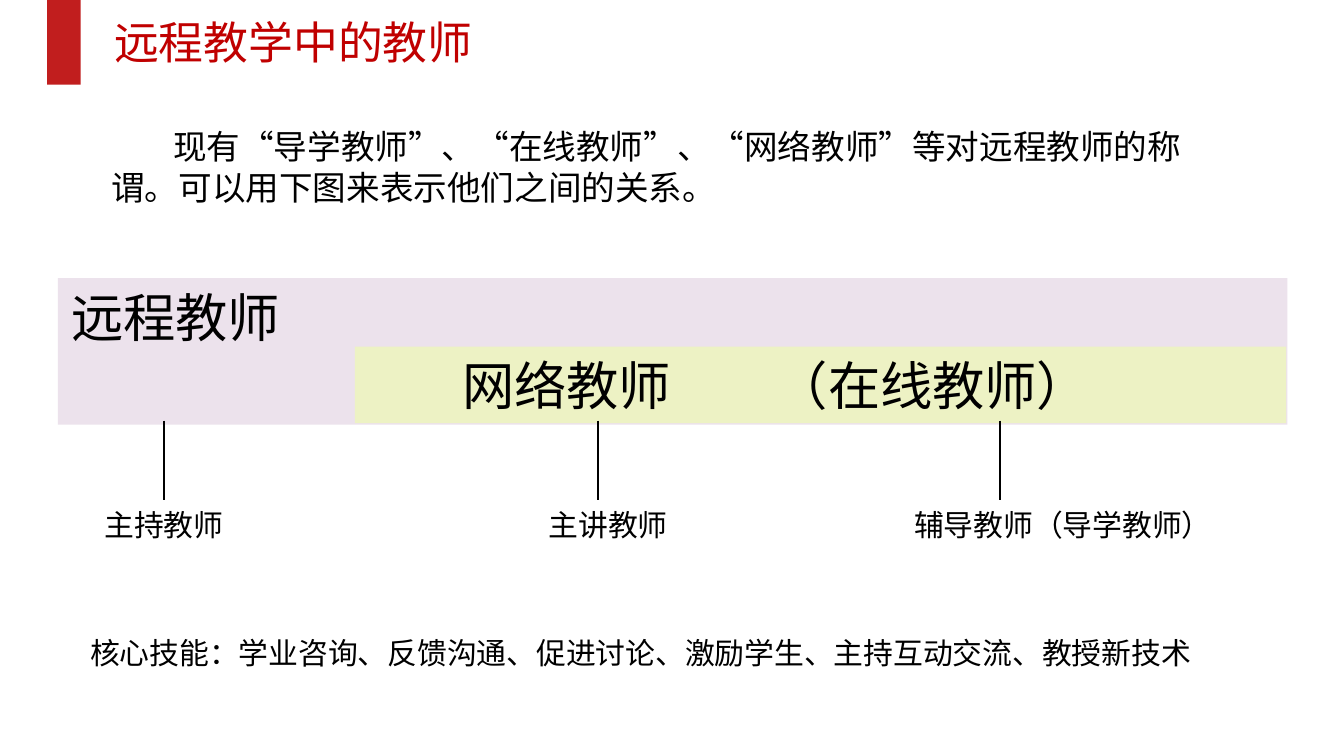
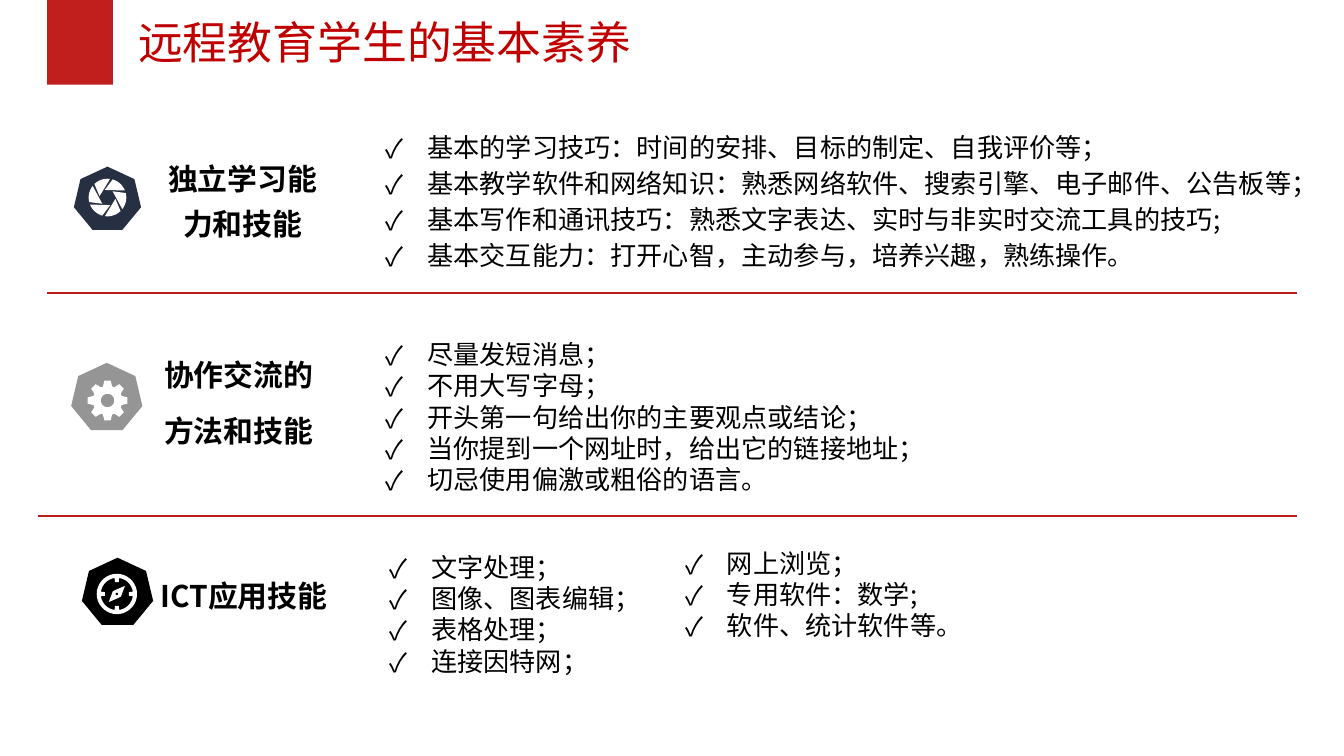
"""Build two slides on teachers and students in distance education."""
import dataclasses
import math

import lxml.etree
import pptx
import pptx.dml.color
import pptx.enum.shapes
import pptx.enum.text
import pptx.oxml.ns
import pptx.util

ALIGN = pptx.enum.text.PP_ALIGN
ANCHOR = pptx.enum.text.MSO_ANCHOR
SHAPE = pptx.enum.shapes.MSO_SHAPE
inch = pptx.util.Inches


@dataclasses.dataclass(frozen=True)
class Theme:
    """Colours and type sizes of the deck."""
    font: str = "Noto Sans CJK SC"
    title: str = "C00000"
    band: str = "C11E1E"
    rule: str = "BD1A1A"
    ink: str = "000000"
    paper: str = "FFFFFF"
    outer: str = "ECE2EC"
    inner: str = "EDF2C4"
    navy: str = "272F42"
    grey: str = "959595"
    title_size: int = 24
    field_size: int = 28
    body_size: int = 18
    label_size: int = 16
    list_size: int = 14


THEME = Theme()
SIZE = (10, 10 * 9 / 16)
BAND_LEFT, BAND_HEIGHT = 0.35, 0.63
STEM_TOP, STEM_BOTTOM = 3.13, 3.72
INSETS = (0.1, 0.05, 0.1, 0.05)
INTRO_INSETS = (0.1, 0.08, 0.1, 0.05)
LIST_INSETS = (0.39, 0, 0.24, 0)
INNER_GAP = 50

TEACHERS = {
    "title": ("远程教学中的教师", 0.75, 0.25),
    "intro": "现有“导学教师”、“在线教师”、“网络教师”等对远程教师的称谓。可以用下图来表示他们之间的关系。",
    "outer": "远程教师",
    "inner": ("网络教师", " ", "（在线教师）"),
    "roles": [
        ("主持教师", 0.28, 1.88, 1.22),
        ("主讲教师", 3.58, 1.89, 4.45),
        ("辅导教师（导学教师）", 6.02, 3.78, 7.44),
    ],
    "skills": "核心技能：学业咨询、反馈沟通、促进讨论、激励学生、主持互动交流、教授新技术",
}

STUDENTS = {
    "title": ("远程教育学生的基本素养", 0.93, 0.49),
    "headings": [
        (["独立学习能力和技能"], (1.13, 1.08, 1.35, 0.74), True),
        (["协作交流的", "方法和技能"], (0.86, 2.54, 1.83, 0.83), True),
        (["ICT应用技能"], (0.67, 4.25, 2.29, 0.37), False),
    ],
    "centred_lists": [
        (["基本的学习技巧：时间的安排、目标的制定、自我评价等；",
          "基本教学软件和网络知识：熟悉网络软件、搜索引擎、电子邮件、公告板等；",
          "基本写作和通讯技巧：熟悉文字表达、实时与非实时交流工具的技巧;",
          "基本交互能力：打开心智，主动参与，培养兴趣，熟练操作。"],
         (2.48, 1, 8.43, 0.96), 1.14),
        (["尽量发短消息；", "不用大写字母；", "开头第一句给出你的主要观点或结论；",
          "当你提到一个网址时，给出它的链接地址；", "切忌使用偏激或粗俗的语言。"],
         (2.48, 2.62, 5, 0.96), None),
    ],
    "ict_lists": [
        (["文字处理；", "图像、图表编辑；", "表格处理；", "连接因特网；"], (2.8, 4.05, 2.48, 1.04)),
        (["网上浏览；", "专用软件：数学;", "软件、统计软件等。"], (5, 4.02, 2.48, 0.81)),
    ],
    "rules": [(0.35, 2.18), (0.28, 3.84)],
}


def rgb(colour):
    """Turn a hex string into a colour."""
    return pptx.dml.color.RGBColor.from_string(colour)


def paint(shape, colour):
    """Give a shape a flat fill without outline or shadow."""
    shape.shadow.inherit = False
    shape.fill.solid()
    shape.fill.fore_color.rgb = rgb(colour)
    shape.line.fill.background()
    return shape


def add_block(slide, kind, box, colour):
    """Add a flat preset shape."""
    return paint(slide.shapes.add_shape(kind, *map(inch, box)), colour)


def write(shape, lines, size, colour=THEME.ink, align=ALIGN.LEFT, bold=False,
          anchor=ANCHOR.TOP, insets=INSETS, spacing=None, before=None):
    """Fill a shape with paragraphs of one style."""
    frame = shape.text_frame
    frame.word_wrap = True
    frame.vertical_anchor = anchor
    (frame.margin_left, frame.margin_top,
     frame.margin_right, frame.margin_bottom) = map(inch, insets)
    frame.text = "\n".join(lines)
    for paragraph in frame.paragraphs:
        paragraph.alignment = align
        paragraph.line_spacing = spacing
        paragraph.space_before = before
        font = paragraph.font
        font.name, font.size, font.bold = THEME.font, pptx.util.Pt(size), bold
        font.color.rgb = rgb(colour)
    return frame.paragraphs


def add_text(slide, box, lines, size, **style):
    """Add a text box and return it with its paragraphs."""
    label = slide.shapes.add_textbox(*map(inch, box))
    return label, write(label, lines, size, **style)


def indent(paragraph, margin, first, bullet=None):
    """Set the indents of a paragraph, and its bullet if it has one."""
    settings = paragraph._p.get_or_add_pPr()
    settings.set("marL", str(inch(margin)))
    settings.set("indent", str(inch(first)))
    if bullet:
        defaults = settings.find(pptx.oxml.ns.qn("a:defRPr"))
        for tag, name, value in (("a:buFont", "typeface", THEME.font),
                                 ("a:buChar", "char", bullet)):
            mark = lxml.etree.Element(pptx.oxml.ns.qn(tag))
            mark.set(name, value)
            defaults.addprevious(mark)


def add_checklist(slide, box, items, **style):
    """Add a list with tick bullets."""
    for paragraph in add_text(slide, box, items, THEME.list_size, **style)[1]:
        indent(paragraph, 0.31, -0.31, bullet="✓")


def add_line(slide, start, end, colour, width):
    """Add a straight line without shadow."""
    line = slide.shapes.add_connector(
        pptx.enum.shapes.MSO_CONNECTOR.STRAIGHT, *map(inch, start + end))
    line.line.color.rgb = rgb(colour)
    line.line.width = pptx.util.Pt(width)
    lxml.etree.SubElement(line._element.spPr, pptx.oxml.ns.qn("a:effectLst"))
    return line


def add_header(slide, text, left, band_width):
    """Add the title and its red band."""
    add_text(slide, (left, 0.06, 4.18, 0.5), [text], THEME.title_size,
             colour=THEME.title, align=ALIGN.JUSTIFY)
    add_block(slide, SHAPE.RECTANGLE, (BAND_LEFT, 0, band_width, BAND_HEIGHT), THEME.band)


def polar(radius, degrees):
    """Return the point at a radius and an angle."""
    angle = math.radians(degrees)
    return radius * math.cos(angle), radius * math.sin(angle)


def arc(radius, start, end, steps=8):
    """Return points along an arc."""
    return [polar(radius, start + (end - start) * i / steps) for i in range(steps + 1)]


def circle(radius):
    """Return the points of a circle."""
    return arc(radius, 0, 360, 36)


def aperture():
    """Return the six blades of a shutter."""
    return [arc(0.14, turn - 82, turn - 134) + [polar(0.06, turn - 170)]
            for turn in range(0, 360, 60)]


def gear():
    """Return a wheel of eight teeth with a hole."""
    teeth = [polar(radius, turn + offset) for turn in range(0, 360, 45)
             for radius, offset in ((0.11, -18), (0.15, -9), (0.15, 9), (0.11, 18))]
    return [teeth, circle(0.05)]


def compass():
    """Return a ring with four ticks, and a needle with a hole."""
    dial = [point for turn in range(0, 360, 90)
            for point in [polar(0.09, turn - 9), polar(0.09, turn + 9)]
            + arc(0.12, turn + 8, turn + 82)]
    half = [(0.06, -0.06), (0.03, 0.02), (0.01, 0.03)]
    needle = half + [(-x, -y) for x, y in half]
    return [circle(0.15), dial, needle, circle(0.01)]


ICONS = [
    ((0.55, 1.24, 0.5, 0.47), THEME.navy, (0.8, 1.47), aperture()),
    ((0.53, 2.7, 0.53, 0.5), THEME.grey, (0.8, 2.98), gear()),
    ((0.61, 4.15, 0.53, 0.5), THEME.ink, (0.87, 4.42), compass()),
]


def add_icon(slide, box, colour, centre, contours):
    """Add a heptagon with a white sign."""
    add_block(slide, SHAPE.HEPTAGON, box, colour)
    builder = None
    for contour in contours:
        first, *rest = [(inch(centre[0] + x), inch(centre[1] + y)) for x, y in contour]
        if builder is None:
            builder = slide.shapes.build_freeform(*first)
        else:
            builder.move_to(*first)
        builder.add_line_segments(rest, close=True)
    paint(builder.convert_to_shape(), THEME.paper)


def add_inner_field(slide):
    """Add the inner field, with a wide gap between its two names."""
    inner = add_block(slide, SHAPE.RECTANGLE, (2.64, 2.58, 6.93, 0.57), THEME.inner)
    name, *others = TEACHERS["inner"]
    paragraph = write(inner, [name], THEME.field_size)[0]
    indent(paragraph, 0, 0.7)
    for part in others:
        run = paragraph.add_run()
        run.text = part
        if part.isspace():
            run._r.get_or_add_rPr().set("spc", str(INNER_GAP * 100))


def build_teachers(slide):
    """Show how the names for teachers relate."""
    add_header(slide, *TEACHERS["title"])
    _, intro = add_text(slide, (0.35, 0.86, 8.58, 0.85), [TEACHERS["intro"]],
                        THEME.body_size, insets=INTRO_INSETS)
    indent(intro[0], 0.38, 0.46)
    outer = add_block(slide, SHAPE.RECTANGLE, (0.43, 2.07, 9.15, 1.09), THEME.outer)
    write(outer, [TEACHERS["outer"]], THEME.field_size)
    add_inner_field(slide)
    for role, left, width, stem in TEACHERS["roles"]:
        label, _ = add_text(slide, (left, STEM_BOTTOM, width, 0.37), [role],
                            THEME.label_size, align=ALIGN.CENTER)
        line = add_line(slide, (stem, STEM_TOP), (stem, STEM_BOTTOM), THEME.ink, 1)
        if math.isclose(left + width / 2, stem):
            line.end_connect(label, 0)
    add_text(slide, (0.67, 4.72, 8.66, 0.38), [TEACHERS["skills"]],
             THEME.label_size, insets=(0, 0, 0, 0))


def build_students(slide):
    """List the basic skills of students."""
    add_header(slide, *STUDENTS["title"])
    for icon in ICONS:
        add_icon(slide, *icon)
    for lines, box, spaced in STUDENTS["headings"]:
        spacing, before = (pptx.util.Pt(24), pptx.util.Pt(6)) if spaced else (None, None)
        add_text(slide, box, lines, THEME.label_size, align=ALIGN.CENTER, bold=True,
                 spacing=spacing, before=before)
    for items, box, spacing in STUDENTS["centred_lists"]:
        add_checklist(slide, box, items, anchor=ANCHOR.MIDDLE,
                      insets=LIST_INSETS, spacing=spacing)
    for items, box in STUDENTS["ict_lists"]:
        add_checklist(slide, box, items)
    for left, top in STUDENTS["rules"]:
        add_line(slide, (left, top), (9.65, top), THEME.rule, 0.75)


def main():
    """Build and save the deck."""
    deck = pptx.Presentation()
    deck.slide_width, deck.slide_height = map(inch, SIZE)
    for build in (build_teachers, build_students):
        build(deck.slides.add_slide(deck.slide_layouts[6]))
    deck.save("out.pptx")


if __name__ == "__main__":
    main()
